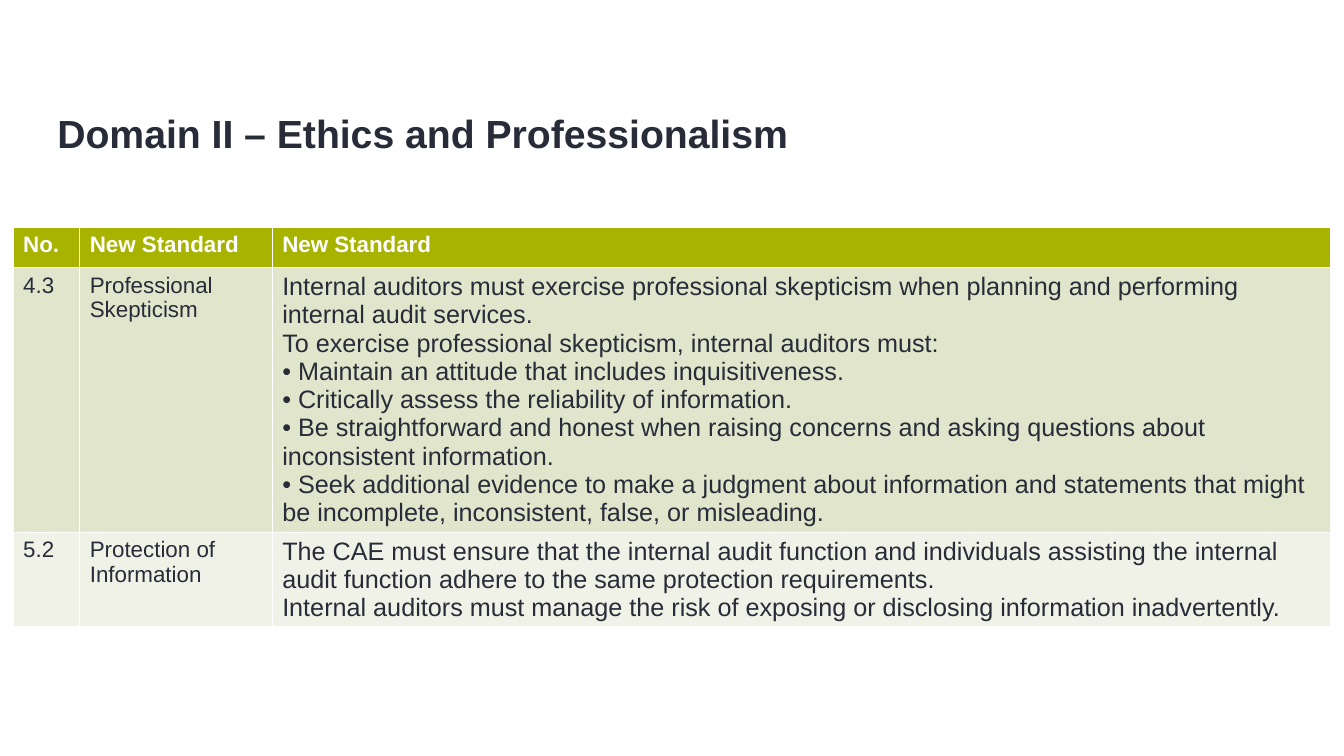
from pptx import Presentation
from pptx import util as u
from pptx.dml import color
from pptx.enum import text

INK = "282C38"
WHITE = "FFFFFF"
WIDTHS = [1.68, 4.85, 26.67]
HEIGHTS = [1.03, 6.66, 2.39]
FILLS = ["A8B300", "E1E5CC", "F1F2E7"]
STANDARDS = [
    [["No."], ["New Standard"], ["New Standard"]],
    [["4.3"], ["Professional Skepticism"], [
        "Internal auditors must exercise professional skepticism when planning "
        "and performing internal audit services.",
        "To exercise professional skepticism, internal auditors must:",
        "• Maintain an attitude that includes inquisitiveness.",
        "• Critically assess the reliability of information.",
        "• Be straightforward and honest when raising concerns and asking "
        "questions about inconsistent information.",
        "• Seek additional evidence to make a judgment about information and "
        "statements that might be incomplete, inconsistent, false, or misleading.",
    ]],
    [["5.2"], ["Protection of Information"], [
        "The CAE must ensure that the internal audit function and individuals "
        "assisting the internal audit function adhere to the same protection "
        "requirements.",
        "Internal auditors must manage the risk of exposing or disclosing "
        "information inadvertently.",
    ]],
]


def paint(target, value):
    target.rgb = color.RGBColor.from_string(value)


def style(paragraph, size, value, bold):
    paragraph.font.name = "Arial"
    paragraph.font.size = u.Pt(size)
    paragraph.font.bold = bold
    paint(paragraph.font.color, value)


deck = Presentation()
deck.slide_width = u.Cm(33.87)
deck.slide_height = u.Cm(19.05)
page = deck.slides.add_slide(deck.slide_layouts[5])

title = page.shapes.title
title.left, title.top = u.Cm(1.19), u.Cm(0)
title.width, title.height = u.Cm(27.79), u.Cm(4.06)
title.text_frame.text = "Domain II – Ethics and Professionalism"
title.text_frame.vertical_anchor = text.MSO_ANCHOR.BOTTOM
heading = title.text_frame.paragraphs[0]
heading.alignment = text.PP_ALIGN.LEFT
style(heading, 28, INK, True)

frame = page.shapes.add_table(
    len(HEIGHTS), len(WIDTHS),
    u.Cm(0.33), u.Cm(5.72), u.Cm(sum(WIDTHS)), u.Cm(sum(HEIGHTS)),
)
table = frame.table
for column, width in zip(table.columns, WIDTHS):
    column.width = u.Cm(width)

for row_index, standard in enumerate(STANDARDS):
    table.rows[row_index].height = u.Cm(HEIGHTS[row_index])
    header = row_index == 0
    for column_index, lines in enumerate(standard):
        cell = table.cell(row_index, column_index)
        cell.fill.solid()
        paint(cell.fill.fore_color, FILLS[row_index])
        cell.text_frame.text = "\n".join(lines)
        size = 18 if column_index == 2 and not header else 16
        for paragraph in cell.text_frame.paragraphs:
            style(paragraph, size, WHITE if header else INK, header)

deck.save("out.pptx")
